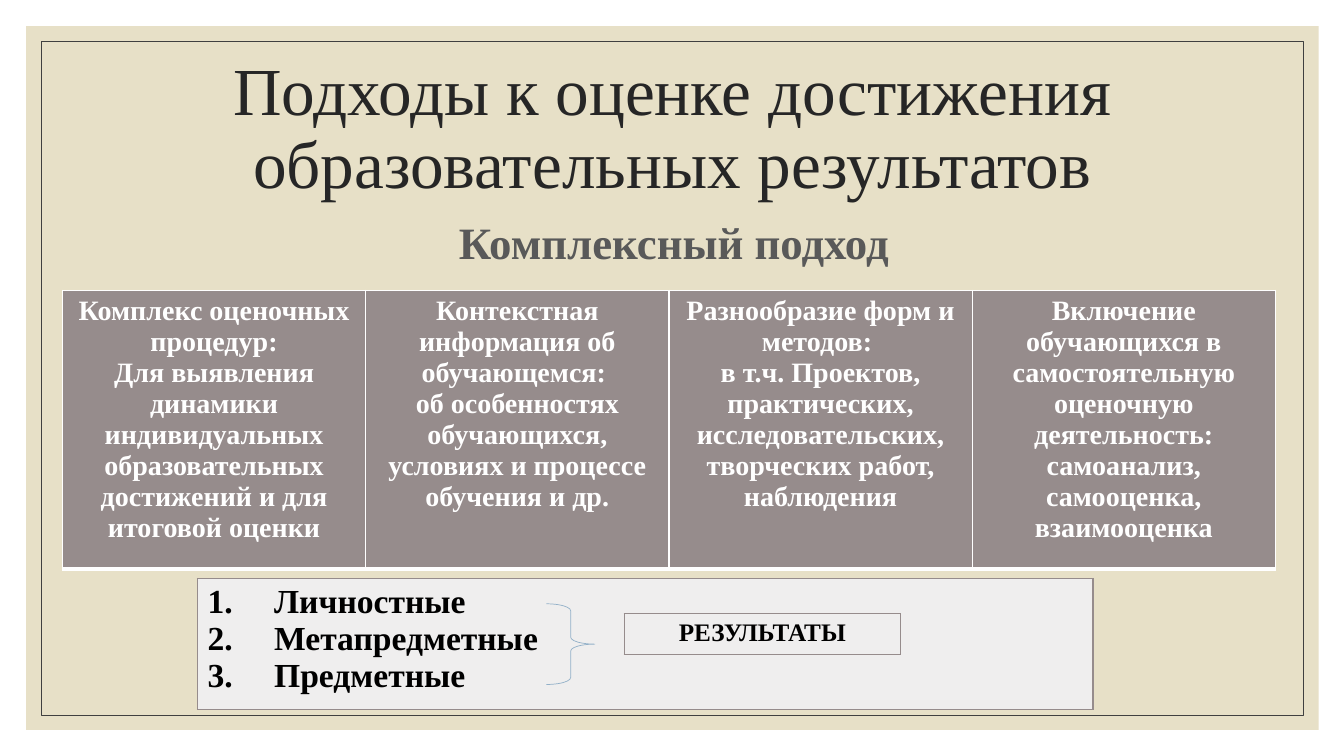
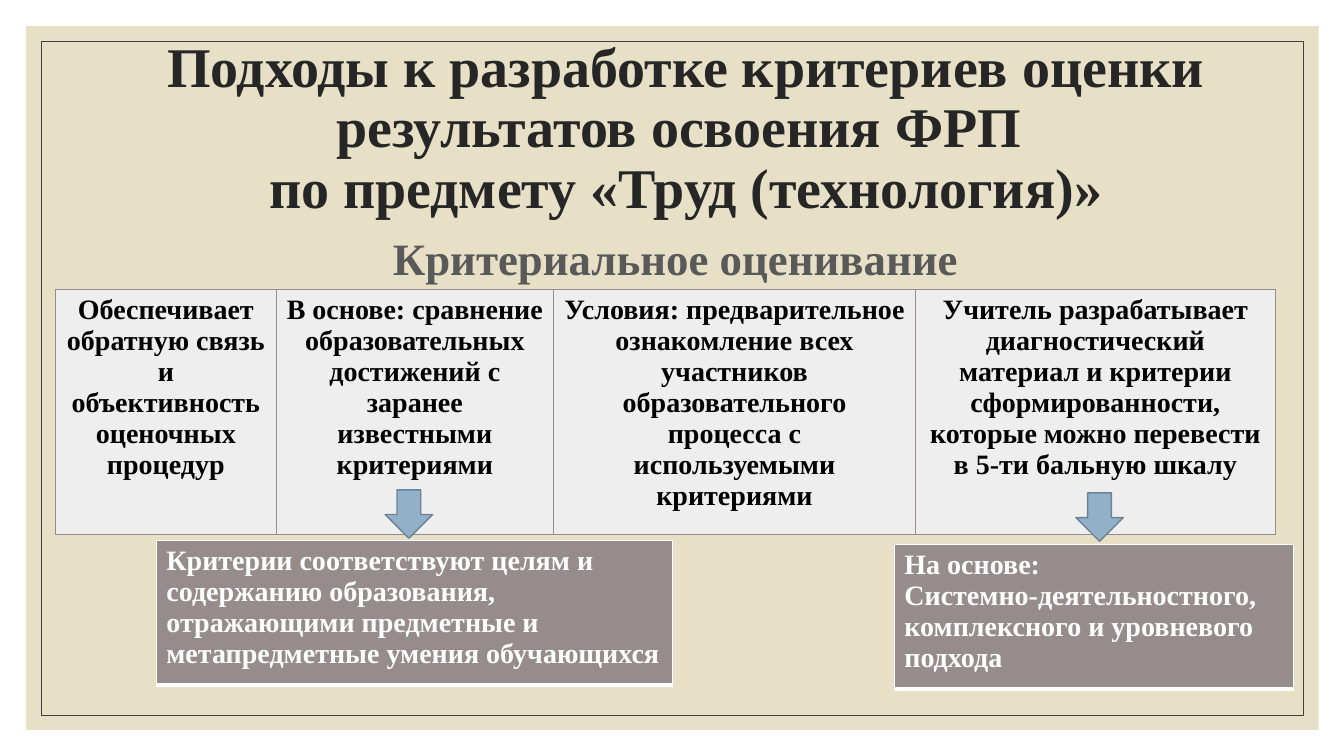
from dataclasses import dataclass

from lxml import etree
from pptx import Presentation
from pptx.dml.color import RGBColor
from pptx.enum.shapes import MSO_SHAPE
from pptx.enum.text import MSO_ANCHOR, MSO_AUTO_SIZE, PP_ALIGN
from pptx.oxml.ns import qn
from pptx.util import Inches, Pt

RECT, BRACE, ARROW = MSO_SHAPE.RECTANGLE, MSO_SHAPE.RIGHT_BRACE, MSO_SHAPE.DOWN_ARROW
LEFT, CENTER = PP_ALIGN.LEFT, PP_ALIGN.CENTER
MIDDLE, FIXED = MSO_ANCHOR.MIDDLE, MSO_AUTO_SIZE.NONE


@dataclass(frozen=True)
class Theme:
    font: str = "Times New Roman"
    sand: str = "E7E0C7"
    frame: str = "404040"
    title: str = "262626"
    subtitle: str = "595959"
    taupe: str = "968C8C"
    pale: str = "EFEEEE"
    white: str = "FFFFFF"
    black: str = "000000"
    blue: str = "92B0C8"
    blue_edge: str = "6C8294"
    subtitle_size: int = 32
    list_size: int = 24
    cell_size: int = 20
    label_size: int = 18


T = Theme()
RGB = RGBColor.from_string
DARK = {"fill": T.taupe, "color": T.white, "edge": T.white, "bottom": 3}
LIGHT = {"fill": T.pale, "color": T.black, "edge": T.taupe, "bottom": 1}

prs = Presentation()
prs.slide_width, prs.slide_height = Inches(13.33), Inches(7.5)
layout = prs.slide_layouts[5]


def box(shares):
    sizes = (prs.slide_width, prs.slide_height) * 2
    return [int(share * size / 100) for share, size in zip(shares, sizes)]


def write(tf, text, size, color, bold=True, align=CENTER, spacing=1, before=0):
    tf.word_wrap = True
    for i, line in enumerate(text.split("\n")):
        p = tf.add_paragraph() if i else tf.paragraphs[0]
        p.alignment, p.line_spacing, p.space_before = align, spacing, Pt(before)
        r = p.add_run()
        r.text = line
        r.font.name, r.font.size, r.font.bold = T.font, Pt(size), bold
        r.font.color.rgb = RGB(color)


SLIDES = [
    {
        "title": "Подходы к оценке достижения образовательных результатов",
        "title_box": (5.55, 7.2, 88.97, 20), "title_size": 48, "title_bold": False,
        "subtitle": "Комплексный подход", "subtitle_box": (4.65, 28.53, 91, 9),
        "tables": [
            ((4.65, 38.4, 90.25, 34.27), DARK, T.cell_size, CENTER, False, [
                (25, "Комплекс оценочных процедур:\nДля выявления динамики индивидуальных "
                     "образовательных достижений и для итоговой оценки"),
                (25, "Контекстная информация об обучающемся: \nоб особенностях обучающихся, "
                     "условиях и процессе обучения и др."),
                (25, "Разнообразие форм и методов: \nв т.ч. Проектов, практических, "
                     "исследовательских, творческих работ, наблюдения"),
                (25, "Включение обучающихся в самостоятельную оценочную деятельность: "
                     "самоанализ, самооценка, взаимооценка"),
            ]),
            ((14.7, 76.53, 66.62, 16.13), LIGHT, T.list_size, LEFT, True,
             [(100, "Личностные\nМетапредметные\nПредметные")]),
            ((46.44, 81.2, 20.56, 5.07), LIGHT, T.label_size, CENTER, False,
             [(100, "РЕЗУЛЬТАТЫ")]),
        ],
        "shapes": [(BRACE, (40.66, 79.87, 3.6, 10.67), None, T.blue, 0.5)],
    },
    {
        "title": "Подходы к разработке критериев оценки результатов освоения ФРП \n"
                 "по предмету «Труд (технология)»",
        "title_box": (5.85, 6.8, 90.32, 20.67), "title_size": 40, "title_bold": True,
        "subtitle": "Критериальное оценивание", "subtitle_box": (5.1, 30.67, 90.32, 9),
        "tables": [
            ((4.13, 38.27, 90.77, 27.33), LIGHT, T.cell_size, CENTER, False, [
                (18.1, "Обеспечивает обратную связь и объективность оценочных процедур"),
                (22.73, "В основе: сравнение образовательных достижений с заранее "
                        "известными критериями"),
                (29.67, "Условия: предварительное ознакомление всех участников "
                        "образовательного процесса с используемыми критериями"),
                (29.5, "Учитель разрабатывает диагностический материал и критерии "
                       "сформированности, которые можно перевести в 5-ти бальную шкалу"),
            ]),
            ((11.63, 71.47, 38.41, 17.6), DARK, T.cell_size, LEFT, False,
             [(100, "Критерии соответствуют целям и содержанию образования, отражающими "
                    "предметные и метапредметные умения обучающихся")]),
            ((66.54, 72, 29.71, 17.6), DARK, T.cell_size, LEFT, False,
             [(100, "На основе:\nСистемно-деятельностного, комплексного и уровневого подхода")]),
        ],
        "shapes": [
            (ARROW, (28.66, 64.8, 3.53, 6.4), T.blue, T.blue_edge, 1),
            (ARROW, (80.05, 65.2, 3.53, 6.4), T.blue, T.blue_edge, 1),
        ],
    },
]
FRAMES = [
    (RECT, (1.95, 3.47, 96.17, 93.07), T.sand, None, 0),
    (RECT, (3.08, 5.47, 93.92, 89.2), None, T.frame, 0.5),
]

for number, spec_data in enumerate(SLIDES):
    s = prs.slides.add_slide(layout)

    title = s.shapes.title
    title.left, title.top, title.width, title.height = box(spec_data["title_box"])
    tf = title.text_frame
    tf.auto_size, tf.vertical_anchor = FIXED, MIDDLE
    write(tf, spec_data["title"], spec_data["title_size"], T.title,
          spec_data["title_bold"], spacing=0.9)

    sp = s.shapes.add_textbox(*box(spec_data["subtitle_box"]))
    write(sp.text_frame, spec_data["subtitle"], T.subtitle_size, T.subtitle,
          spacing=0.9, before=9)

    for area, style, size, align, numbered, cells in spec_data["tables"]:
        x, y, w, h = box(area)
        table = s.shapes.add_table(1, len(cells), x, y, w, h).table
        table.first_row = table.horz_banding = False
        for i, (share, text) in enumerate(cells):
            table.columns[i].width = int(w * share / 100)
            cell = table.cell(0, i)
            write(cell.text_frame, text, size, style["color"], align=align)
            tcPr = cell._tc.get_or_add_tcPr()
            for side in "LRTB":
                width = style["bottom"] if side == "B" else 1
                ln = etree.SubElement(tcPr, qn(f"a:ln{side}"), w=str(Pt(width)))
                fill = etree.SubElement(ln, qn("a:solidFill"))
                etree.SubElement(fill, qn("a:srgbClr"), val=style["edge"])
            cell.fill.solid()
            cell.fill.fore_color.rgb = RGB(style["fill"])
            if numbered:
                for p in cell.text_frame.paragraphs:
                    pPr = p._p.get_or_add_pPr()
                    pPr.set("marL", str(Inches(0.66)))
                    pPr.set("indent", str(-Inches(0.66)))
                    etree.SubElement(pPr, qn("a:buFont"), typeface=T.font)
                    etree.SubElement(pPr, qn("a:buAutoNum"), type="arabicPeriod")

    frames = [] if number else FRAMES
    for i, (kind, area, fill, line, width) in enumerate(frames + spec_data["shapes"]):
        sp = s.shapes.add_shape(kind, *box(area))
        sp.shadow.inherit = False
        if fill:
            sp.fill.solid()
            sp.fill.fore_color.rgb = RGB(fill)
        else:
            sp.fill.background()
        if line:
            sp.line.color.rgb = RGB(line)
            sp.line.width = Pt(width)
        else:
            sp.line.fill.background()
        if kind == BRACE:
            sp.adjustments[0], sp.adjustments[1] = 0.144, 0.5
        if i < len(frames):
            sp.element.xpath("./p:nvSpPr/p:cNvPr")[0].set("id", str(100 + i))
            layout.shapes.element.insert(2 + i, sp.element)

prs.save("out.pptx")
